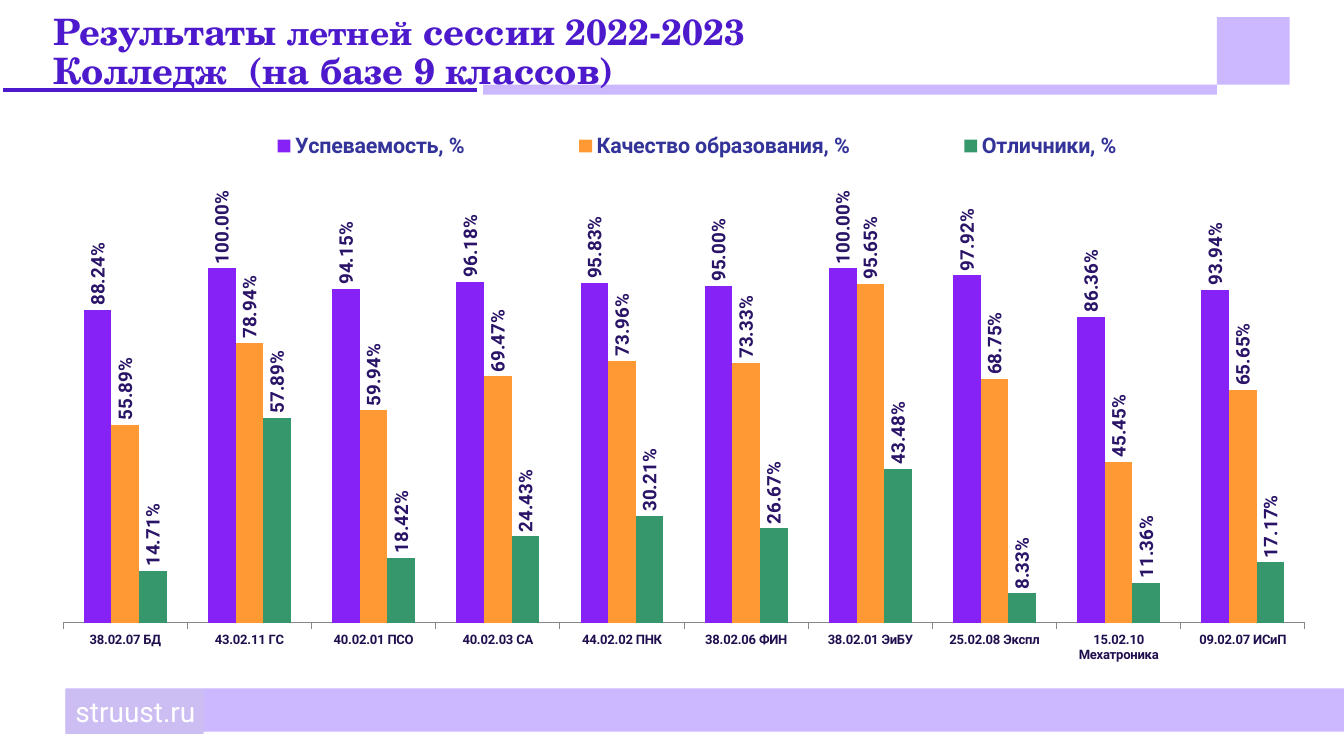
from dataclasses import dataclass

from lxml import etree
from pptx import Presentation
from pptx.chart.data import CategoryChartData
from pptx.dml.color import RGBColor
from pptx.enum.chart import XL_CHART_TYPE, XL_LABEL_POSITION, XL_LEGEND_POSITION, XL_TICK_MARK
from pptx.enum.shapes import MSO_SHAPE
from pptx.enum.text import MSO_ANCHOR, PP_ALIGN
from pptx.oxml.ns import qn
from pptx.util import Inches, Pt

RECTANGLE = MSO_SHAPE.RECTANGLE
COLUMNS = XL_CHART_TYPE.COLUMN_CLUSTERED
OUTSIDE_END = XL_LABEL_POSITION.OUTSIDE_END
LEGEND_RIGHT = XL_LEGEND_POSITION.RIGHT
TICK_OUTSIDE, TICK_NONE = XL_TICK_MARK.OUTSIDE, XL_TICK_MARK.NONE
TOP, MIDDLE = MSO_ANCHOR.TOP, MSO_ANCHOR.MIDDLE
LEFT = PP_ALIGN.LEFT


@dataclass(frozen=True)
class Theme:
    """Colours, fonts and type sizes of the slide."""
    violet: str = "4D19CC"
    lavender: str = "CBB8FF"
    tag: str = "CCBEF3"
    white: str = "FFFFFF"
    axis: str = "868686"
    category: str = "1F0F4E"
    label: str = "2A1468"
    legend: str = "333399"
    title_font: str = "TeX Gyre Schola"
    body_font: str = "Roboto"
    title_size: float = 26
    small_title_size: float = 24
    site_size: float = 20
    legend_size: float = 15.3
    label_size: float = 13.4
    category_size: float = 9.3


THEME = Theme()
CATEGORIES = [
    "38.02.07 БД", "43.02.11 ГС", "40.02.01 ПСО", "40.02.03 СА", "44.02.02 ПНК",
    "38.02.06 ФИН", "38.02.01 ЭиБУ", "25.02.08 Экспл", "15.02.10 Мехатроника",
    "09.02.07 ИСиП",
]
SERIES = [
    ("Успеваемость, %", "8722F6",
     [0.8824, 1, 0.9415, 0.9618, 0.9583, 0.95, 1, 0.9792, 0.8636, 0.9394]),
    ("Качество образования, %", "FF9933",
     [0.5589, 0.7894, 0.5994, 0.6947, 0.7396, 0.7333, 0.9565, 0.6875, 0.4545, 0.6565]),
    ("Отличники, %", "35976B",
     [0.1471, 0.5789, 0.1842, 0.2443, 0.3021, 0.2667, 0.4348, 0.0833, 0.1136, 0.1717]),
]


def style_font(font, size, color, name=THEME.body_font, bold=False):
    """Apply face, size, weight and colour to a font."""
    font.name, font.size, font.bold = name, Pt(size), bold
    font.color.rgb = RGBColor.from_string(color)


def add_text(paragraph, text, **style):
    """Append a styled run to a paragraph."""
    run = paragraph.add_run()
    run.text = text
    style_font(run.font, **style)


def add_bar(slide, left, top, width, height, color, outline=None):
    """Add a plain rectangle, optionally with a thick outline."""
    shape = slide.shapes.add_shape(
        RECTANGLE, Inches(left), Inches(top), Inches(width), Inches(height))
    shape.shadow.inherit = False
    shape.fill.solid()
    shape.fill.fore_color.rgb = RGBColor.from_string(color)
    if outline:
        shape.line.color.rgb = RGBColor.from_string(outline)
        shape.line.width = Pt(4.5)
    else:
        shape.line.fill.background()
    return shape


def add_header(slide, left, top, width, height):
    """Place the title, its rule and the corner square."""
    square, rule = 0.72, 0.1
    rule_top = top + height
    add_bar(slide, left, rule_top, width - square, rule, THEME.lavender)
    add_bar(slide, left, rule_top, 4.76, rule, THEME.violet, THEME.white)
    add_bar(slide, left + width - square, top, square, height, THEME.lavender)
    box = slide.shapes.add_textbox(
        Inches(left + 0.43), Inches(top - 0.08), Inches(7.34), Inches(0.46))
    frame = box.text_frame
    frame.word_wrap = True
    frame.vertical_anchor = TOP
    paragraph = frame.paragraphs[0]
    paragraph.line_spacing = 0.9
    style = dict(color=THEME.violet, name=THEME.title_font, bold=True)
    add_text(paragraph, "Результаты ", size=THEME.title_size, **style)
    add_text(paragraph, "летней", size=THEME.small_title_size, **style)
    add_text(paragraph, " сессии 2022-2023", size=THEME.title_size, **style)
    paragraph.add_line_break()
    add_text(paragraph, "Колледж  (на базе 9 классов)", size=THEME.title_size, **style)


def add_footer(slide, left, top, width, height):
    """Place the footer band and the site tag."""
    add_bar(slide, left, top, width, height, THEME.lavender)
    tag = add_bar(slide, left, top + 0.01, 1.37, 0.44, THEME.tag)
    frame = tag.text_frame
    frame.word_wrap = False
    frame.vertical_anchor = MIDDLE
    paragraph = frame.paragraphs[0]
    paragraph.alignment = LEFT
    add_text(paragraph, "struust.ru", size=THEME.site_size, color=THEME.white)


def set_layout(parent, position, x, y, w, h, inner=False):
    """Give a chart part a manual layout in fractions of the chart."""
    for existing in parent.findall(qn("c:layout")):
        parent.remove(existing)
    layout = etree.Element(qn("c:layout"))
    manual = etree.SubElement(layout, qn("c:manualLayout"))
    settings = [("layoutTarget", "inner")] if inner else []
    settings += [("xMode", "edge"), ("yMode", "edge"), ("x", x), ("y", y), ("w", w), ("h", h)]
    for tag, value in settings:
        etree.SubElement(manual, qn(f"c:{tag}")).set("val", str(value))
    parent.insert(position, layout)


def format_axes(chart):
    """Style the category axis and hide the value axis."""
    category_axis, value_axis = chart.category_axis, chart.value_axis
    category_axis.major_tick_mark = TICK_OUTSIDE
    category_axis.minor_tick_mark = TICK_NONE
    category_axis.has_major_gridlines = False
    category_axis.format.line.color.rgb = RGBColor.from_string(THEME.axis)
    style_font(category_axis.tick_labels.font, THEME.category_size, THEME.category, bold=True)
    value_axis.minimum_scale, value_axis.maximum_scale = 0, 1.2
    value_axis.has_major_gridlines = False
    value_axis.visible = False


def format_series(series, color):
    """Colour one series and add upright value labels."""
    series.format.fill.solid()
    series.format.fill.fore_color.rgb = RGBColor.from_string(color)
    series.invert_if_negative = False
    labels = series.data_labels
    labels.show_value = True
    labels.number_format, labels.number_format_is_linked = "0.00%", False
    labels.position = OUTSIDE_END
    style_font(labels.font, THEME.label_size, THEME.label, bold=True)
    body = labels._element.find(qn("c:txPr")).find(qn("a:bodyPr"))
    body.set("rot", "-5400000")
    body.set("vert", "horz")


def add_results_chart(slide, left, top, width, height):
    """Place the clustered column chart of session results."""
    data = CategoryChartData(number_format="0.00%")
    data.categories = CATEGORIES
    for name, _, values in SERIES:
        data.add_series(name, values)
    chart = slide.shapes.add_chart(
        COLUMNS, Inches(left), Inches(top), Inches(width), Inches(height), data).chart
    style_font(chart.font, THEME.label_size, THEME.label)
    chart.has_title = False
    chart.has_legend = True
    legend = chart.legend
    legend.position = LEGEND_RIGHT
    legend.include_in_layout = False
    style_font(legend.font, THEME.legend_size, THEME.legend, bold=True)
    set_layout(legend._element, 1, 0.1, 0.02, 0.82, 0.11)
    format_axes(chart)
    plot = chart.plots[0]
    plot.gap_width = 150
    plot.vary_by_categories = False
    for series, (_, color, _) in zip(plot.series, SERIES):
        format_series(series, color)
    plot_area = chart._chartSpace.chart.plotArea
    set_layout(plot_area, 0, 0.017, 0.164, 0.966, 0.74, inner=True)


def main():
    """Build the slide and save the presentation."""
    presentation = Presentation()
    presentation.slide_width, presentation.slide_height = Inches(13.33), Inches(7.5)
    slide = presentation.slides.add_slide(presentation.slide_layouts[6])
    add_header(slide, 0, 0.17, 12.79, 0.67)
    add_results_chart(slide, 0.41, 1.02, 12.75, 5.71)
    add_footer(slide, 0.65, 6.83, 12.68, 0.43)
    presentation.save("out.pptx")


if __name__ == "__main__":
    main()
